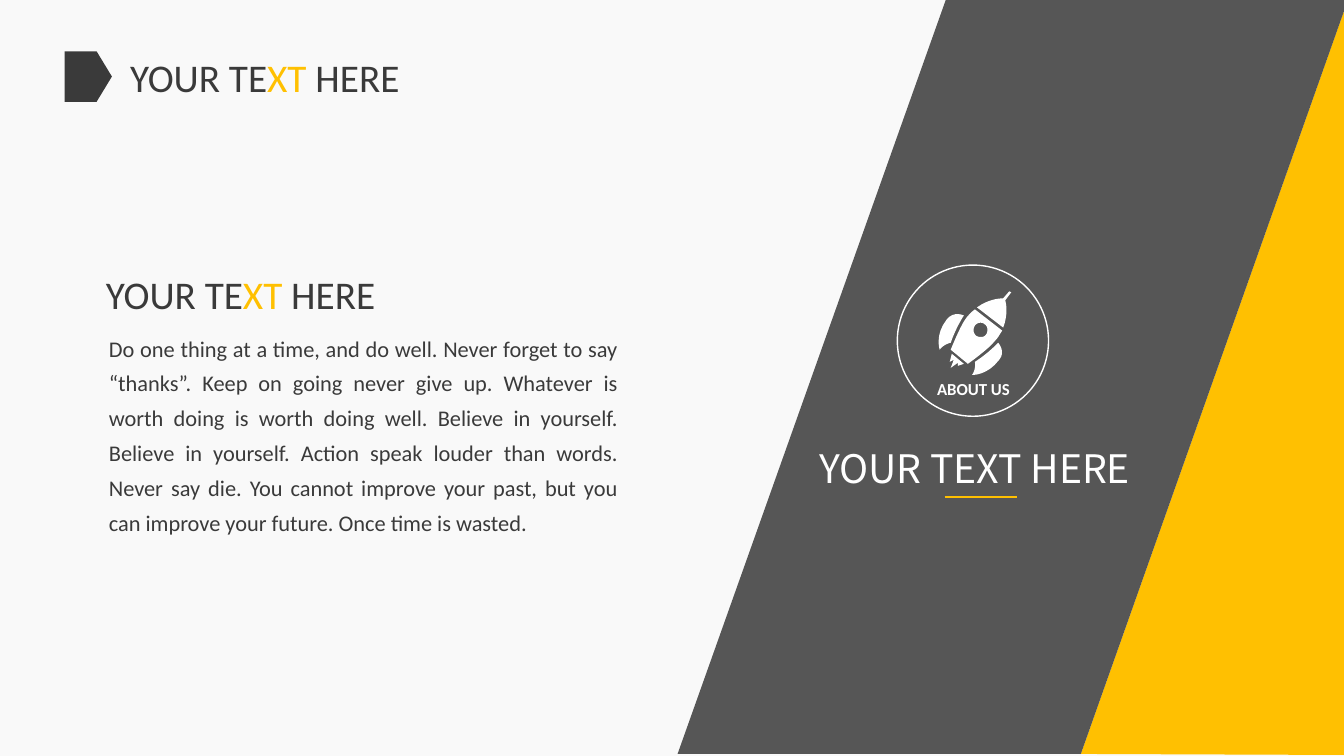
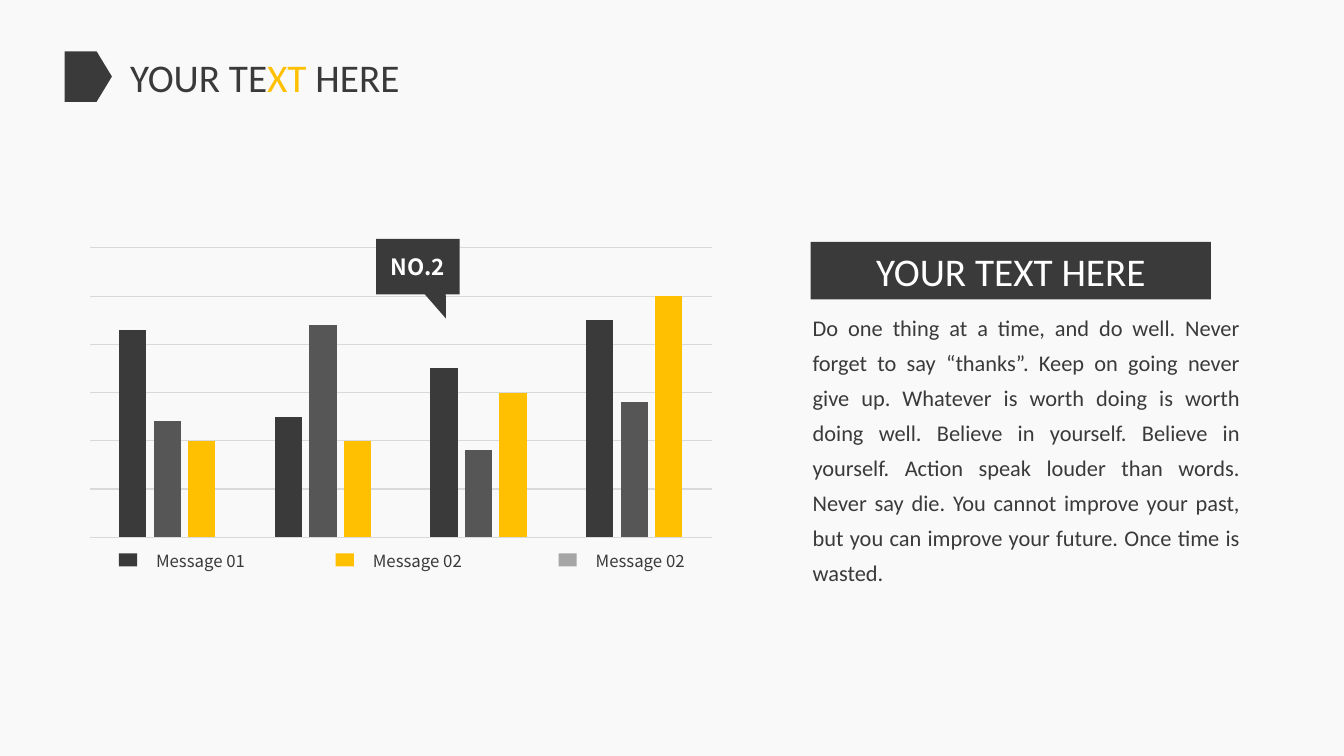
from dataclasses import dataclass
from typing import NamedTuple

from lxml import etree
from pptx import Presentation
from pptx.chart.data import CategoryChartData
from pptx.dml.color import RGBColor
from pptx.enum.chart import XL_CHART_TYPE as ChartType
from pptx.enum.shapes import MSO_CONNECTOR as Connector, MSO_SHAPE as Preset
from pptx.enum.text import MSO_ANCHOR as Anchor, MSO_AUTO_SIZE as AutoSize, PP_ALIGN as Align
from pptx.oxml.ns import qn
from pptx.shapes.autoshape import Shape
from pptx.slide import Slide, SlideLayout
from pptx.text.text import TextFrame
from pptx.util import Inches, Pt


@dataclass(frozen=True)
class Theme:
    paper: str = "F9F9F9"
    dark: str = "3A3A3A"
    gray: str = "565656"
    light_gray: str = "A6A6A6"
    grid: str = "D9D9D9"
    yellow: str = "FFC001"
    white: str = "FFFFFF"
    font: str = "Calibri"
    alt_font: str = "Noto Sans CJK SC"
    heading: int = 28
    body: int = 16
    label: int = 12
    chart: int = 10


THEME = Theme()


class Box(NamedTuple):
    left: float
    top: float
    width: float
    height: float


class TextStyle(NamedTuple):
    size: int
    color: str = THEME.dark
    font: str = THEME.font
    bold: bool = False
    align: Align = Align.CENTER


class LegendEntry(NamedTuple):
    label: str
    left: float
    color: str


class BarSeries(NamedTuple):
    name: str
    values: tuple[int, ...]
    color: str


Points = list[tuple[float, float]]

HEADING = "YOUR TEXT HERE"
HEADING_PARTS = (("YOUR TE", THEME.dark), ("XT", THEME.yellow), (" HERE", THEME.dark))
ADVICE = (
    "Do one thing at a time, and do well. Never forget to say “thanks”. "
    "Keep on going never give up. Whatever is worth doing is worth doing well. "
    "Believe in yourself. Believe in yourself. Action speak louder than words. "
    "Never say die. You cannot improve your past, but you can improve your future. "
    "Once time is wasted."
)

HEADING_STYLE = TextStyle(THEME.heading)
BODY_STYLE = TextStyle(THEME.body, align=Align.JUSTIFY)
LEGEND_STYLE = TextStyle(THEME.label, font=THEME.alt_font, align=Align.LEFT)

TITLE_BOX = Box(0.64, 0.48, 3.97, 0.57)
MARKER_BOX = Box(0.64, 0.51, 0.47, 0.5)

GRAY_BAND = [(9.38, 0), (13.33, 0), (13.33, 0.11), (10.72, 7.48), (6.72, 7.48)]
YELLOW_BAND = [(13.33, 0.11), (13.33, 7.49), (10.72, 7.48)]

# Each outline is a start point, then lines (x, y) and cubic curves (six numbers).
ROCKET = (
    ((9.64, 3.72), (9.64, 3.72, 9.68, 3.68, 9.67, 3.59), (9.81, 3.5, 9.9, 3.4, 9.9, 3.4),
     (9.9, 3.4, 9.98, 3.49, 9.91, 3.57), (9.79, 3.73, 9.64, 3.72, 9.64, 3.72)),
    ((9.43, 3.47), (9.43, 3.47, 9.52, 3.24, 9.58, 3.16), (9.61, 3.12, 9.64, 3.09, 9.67, 3.07),
     (9.94, 3.28), (9.92, 3.31, 9.9, 3.35, 9.87, 3.38), (9.81, 3.46, 9.6, 3.61, 9.6, 3.61)),
    ((9.77, 3.22), (9.74, 3.19, 9.69, 3.2, 9.67, 3.23), (9.65, 3.26, 9.65, 3.3, 9.68, 3.33),
     (9.71, 3.35, 9.76, 3.35, 9.78, 3.32), (9.8, 3.29, 9.8, 3.24, 9.77, 3.22)),
    ((9.95, 2.96), (10.01, 2.89), (10.03, 2.9), (9.97, 2.98),
     (9.98, 3.01, 10, 3.12, 9.95, 3.25), (9.69, 3.05), (9.8, 2.97, 9.91, 2.96, 9.95, 2.96)),
    ((9.32, 3.47), (9.32, 3.47, 9.27, 3.32, 9.39, 3.17), (9.46, 3.08, 9.56, 3.13, 9.56, 3.13),
     (9.56, 3.13, 9.48, 3.25, 9.43, 3.4), (9.35, 3.42, 9.32, 3.47, 9.32, 3.47)),
    ((9.5, 3.63), (9.5, 3.6), (9.43, 3.65), (9.46, 3.57), (9.42, 3.59), (9.44, 3.51),
     (9.56, 3.61)),
)

BARS = (
    BarSeries("Series 1", (86, 50, 70, 90), THEME.dark),
    BarSeries("Series 2", (48, 88, 36, 56), THEME.gray),
    BarSeries("Series 3", (40, 40, 60, 100), THEME.yellow),
)
LEGEND = (
    LegendEntry("Message 01", 1.18, THEME.dark),
    LegendEntry("Message 02", 3.33, THEME.yellow),
    LegendEntry("Message 02", 5.54, THEME.light_gray),
)


def rgb(color: str) -> RGBColor:
    return RGBColor.from_string(color)


def emu(box: Box) -> tuple[int, ...]:
    return tuple(Inches(length) for length in box)


def place(shape: Shape, box: Box) -> None:
    shape.left, shape.top, shape.width, shape.height = emu(box)


def style_text(frame: TextFrame, style: TextStyle) -> None:
    frame.word_wrap = True
    frame.auto_size = AutoSize.NONE
    for paragraph in frame.paragraphs:
        paragraph.alignment = style.align
        for run in paragraph.runs:
            run.font.name = style.font
            run.font.size = Pt(style.size)
            run.font.bold = style.bold
            run.font.color.rgb = rgb(style.color)


def add_text(slide: Slide, box: Box, text: str, style: TextStyle) -> None:
    frame = slide.shapes.add_textbox(*emu(box)).text_frame
    frame.text = text
    style_text(frame, style)


def paint(shape: Shape, color: str) -> None:
    shape.shadow.inherit = False
    shape.fill.solid()
    shape.fill.fore_color.rgb = rgb(color)
    shape.line.fill.background()


def add_filled(slide: Slide, preset: Preset, box: Box, color: str) -> Shape:
    shape = slide.shapes.add_shape(preset, *emu(box))
    paint(shape, color)
    return shape


def add_outline(slide: Slide, contours: list[Points], color: str) -> None:
    """Draw closed contours, given in inches, as one filled freeform."""
    first, *others = [[(Inches(x), Inches(y)) for x, y in points] for points in contours]
    builder = slide.shapes.build_freeform(*first[0])
    builder.add_line_segments(first[1:])
    for points in others:
        builder.move_to(*points[0])
        builder.add_line_segments(points[1:])
    paint(builder.convert_to_shape(), color)


def flatten(contour: tuple[tuple[float, ...], ...], steps: int = 8) -> Points:
    """Turn lines and cubic curves into a run of points."""
    points = [contour[0]]
    for segment in contour[1:]:
        if len(segment) == 2:
            points.append(segment)
            continue
        controls = (points[-1], segment[:2], segment[2:4], segment[4:])
        for step in range(1, steps + 1):
            t = step / steps
            weights = ((1 - t) ** 3, 3 * t * (1 - t) ** 2, 3 * t**2 * (1 - t), t**3)
            points.append(tuple(
                sum(weight * control[axis] for weight, control in zip(weights, controls))
                for axis in (0, 1)
            ))
    return points


def write_accented_heading(frame: TextFrame) -> None:
    paragraph = frame.paragraphs[0]
    for text, _ in HEADING_PARTS:
        paragraph.add_run().text = text
    style_text(frame, HEADING_STYLE)
    for run, (_, color) in zip(paragraph.runs, HEADING_PARTS):
        run.font.color.rgb = rgb(color)


def write_advice(slide: Slide, box: Box) -> None:
    body = slide.placeholders[1]
    place(body, box)
    body.text_frame.text = ADVICE
    style_text(body.text_frame, BODY_STYLE)
    paragraph = body.text_frame.paragraphs[0]
    paragraph.line_spacing = 1.3
    paragraph.space_before = Pt(0)
    properties = paragraph._p.get_or_add_pPr()
    properties.set("marL", "0")
    properties.set("indent", "0")
    etree.SubElement(properties, qn("a:buNone"))


def add_slide(deck: Presentation, layout: SlideLayout) -> Slide:
    """Add a slide with the shared heading and its marker."""
    slide = deck.slides.add_slide(layout)
    write_accented_heading(slide.shapes.title.text_frame)
    marker = add_filled(slide, Preset.PENTAGON, MARKER_BOX, THEME.dark)
    marker.adjustments[0] = 0.322
    return slide


def add_underline(slide: Slide) -> None:
    y = Inches(4.93)
    underline = slide.shapes.add_connector(Connector.STRAIGHT, Inches(9.37), y, Inches(10.09), y)
    underline.line.color.rgb = rgb(THEME.yellow)
    underline.line.width = Pt(1.75)
    etree.SubElement(underline._element.spPr, qn("a:effectLst"))


def build_about(deck: Presentation, layout: SlideLayout) -> None:
    slide = add_slide(deck, layout)
    add_outline(slide, [YELLOW_BAND], THEME.yellow)
    add_outline(slide, [GRAY_BAND], THEME.gray)

    badge = slide.shapes.add_shape(Preset.OVAL, *emu(Box(8.9, 2.63, 1.5, 1.5)))
    badge.shadow.inherit = False
    badge.fill.background()
    badge.line.color.rgb = rgb(THEME.white)
    badge.line.width = Pt(1)
    add_outline(slide, [flatten(contour) for contour in ROCKET], THEME.white)
    add_text(slide, Box(9.15, 3.71, 1.01, 0.3), "ABOUT US",
             TextStyle(THEME.label, THEME.white, bold=True))
    add_text(slide, Box(7.27, 4.36, 4.79, 0.57), HEADING,
             TextStyle(THEME.heading, THEME.white, THEME.alt_font))
    add_underline(slide)

    subheading = slide.shapes.add_textbox(*emu(Box(0.4, 2.63, 3.97, 0.57)))
    write_accented_heading(subheading.text_frame)
    write_advice(slide, Box(0.98, 3.19, 5.25, 2.17))


def add_bar_chart(slide: Slide, box: Box) -> None:
    data = CategoryChartData()
    data.categories = ["1", "2", "3", "4"]
    for bars in BARS:
        data.add_series(bars.name, bars.values)
    chart = slide.shapes.add_chart(ChartType.COLUMN_CLUSTERED, *emu(box), data).chart
    chart.has_legend = chart.has_title = False
    chart.font.name = THEME.alt_font
    chart.font.size = Pt(THEME.chart)
    chart.font.color.rgb = rgb("000000")
    chart.category_axis.visible = False

    scale = chart.value_axis
    scale.visible = False
    scale.minimum_scale, scale.maximum_scale, scale.major_unit = 0, 120, 20
    scale.has_major_gridlines = True
    scale.major_gridlines.format.line.color.rgb = rgb(THEME.grid)
    scale.major_gridlines.format.line.width = Pt(0.75)

    plot = chart.plots[0]
    plot.gap_width, plot.overlap, plot.vary_by_categories = 219, -27, False
    for series, bars in zip(plot.series, BARS):
        series.format.fill.solid()
        series.format.fill.fore_color.rgb = rgb(bars.color)


def build_chart_slide(deck: Presentation, layout: SlideLayout) -> None:
    slide = add_slide(deck, layout)
    add_bar_chart(slide, Box(0.76, 2.4, 6.43, 2.99))
    for entry in LEGEND:
        add_filled(slide, Preset.RECTANGLE, Box(entry.left, 5.49, 0.18, 0.13), entry.color)
        add_text(slide, Box(entry.left + 0.27, 5.41, 1.3, 0.3), entry.label, LEGEND_STYLE)

    callout = add_filled(slide, Preset.RECTANGULAR_CALLOUT, Box(3.73, 2.37, 0.83, 0.55), THEME.dark)
    callout.adjustments[0], callout.adjustments[1] = 0.336, 0.937
    callout.text_frame.text = "NO.2"
    callout.text_frame.margin_left = callout.text_frame.margin_right = 0
    style_text(callout.text_frame, TextStyle(THEME.body, THEME.white, THEME.alt_font, bold=True))

    banner = add_filled(slide, Preset.RECTANGLE, Box(8.04, 2.4, 3.97, 0.57), THEME.dark)
    banner.text_frame.text = HEADING
    style_text(banner.text_frame, TextStyle(THEME.heading, THEME.white))
    write_advice(slide, Box(7.96, 2.99, 4.44, 2.55))


def main() -> None:
    deck = Presentation()
    deck.slide_width, deck.slide_height = Inches(13.33), Inches(7.5)
    background = deck.slide_master.background.fill
    background.solid()
    background.fore_color.rgb = rgb(THEME.paper)
    layout = deck.slide_layouts[1]
    place(layout.placeholders[0], TITLE_BOX)
    layout.placeholders[0].text_frame.vertical_anchor = Anchor.TOP
    build_about(deck, layout)
    build_chart_slide(deck, layout)
    deck.save("out.pptx")


if __name__ == "__main__":
    main()
